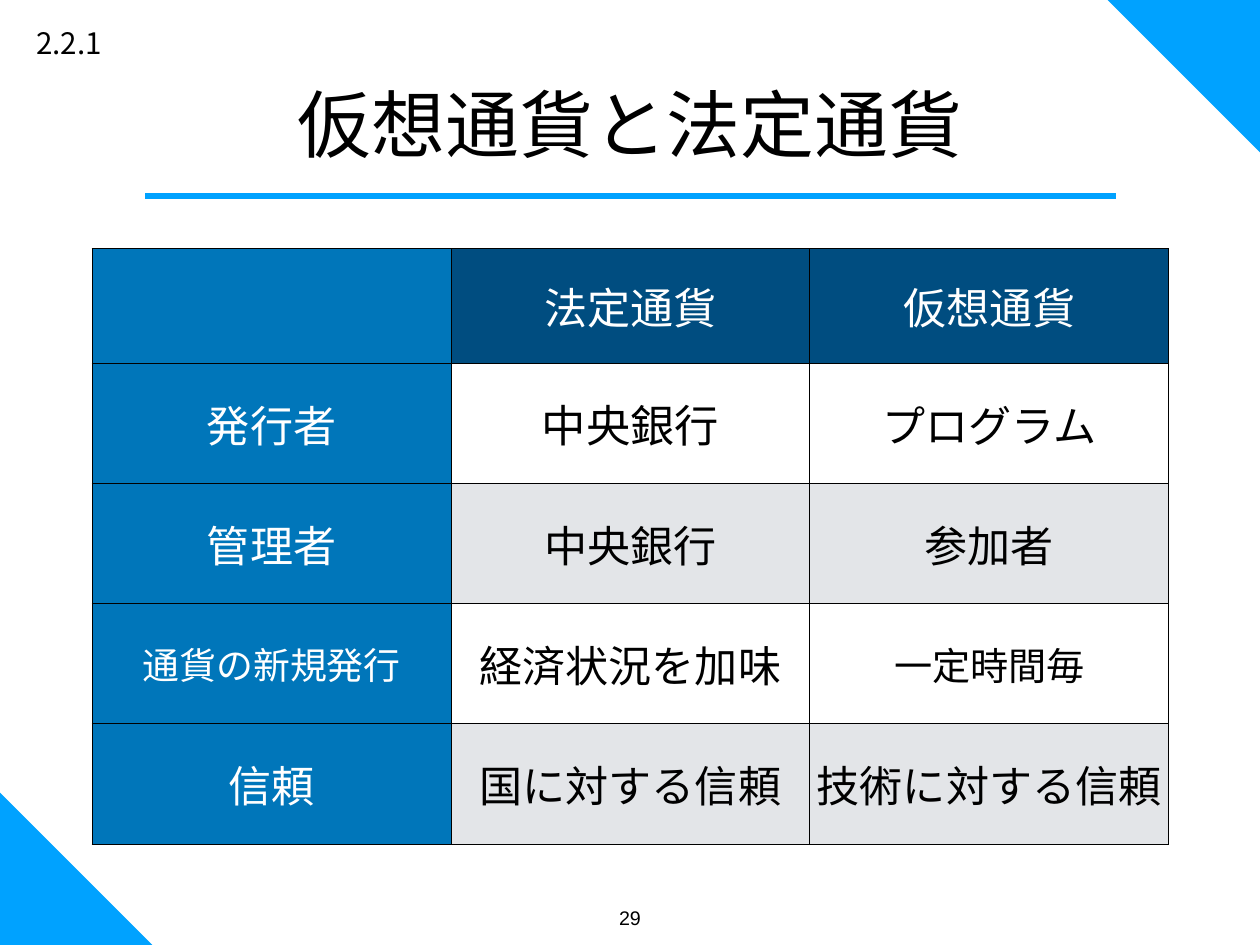
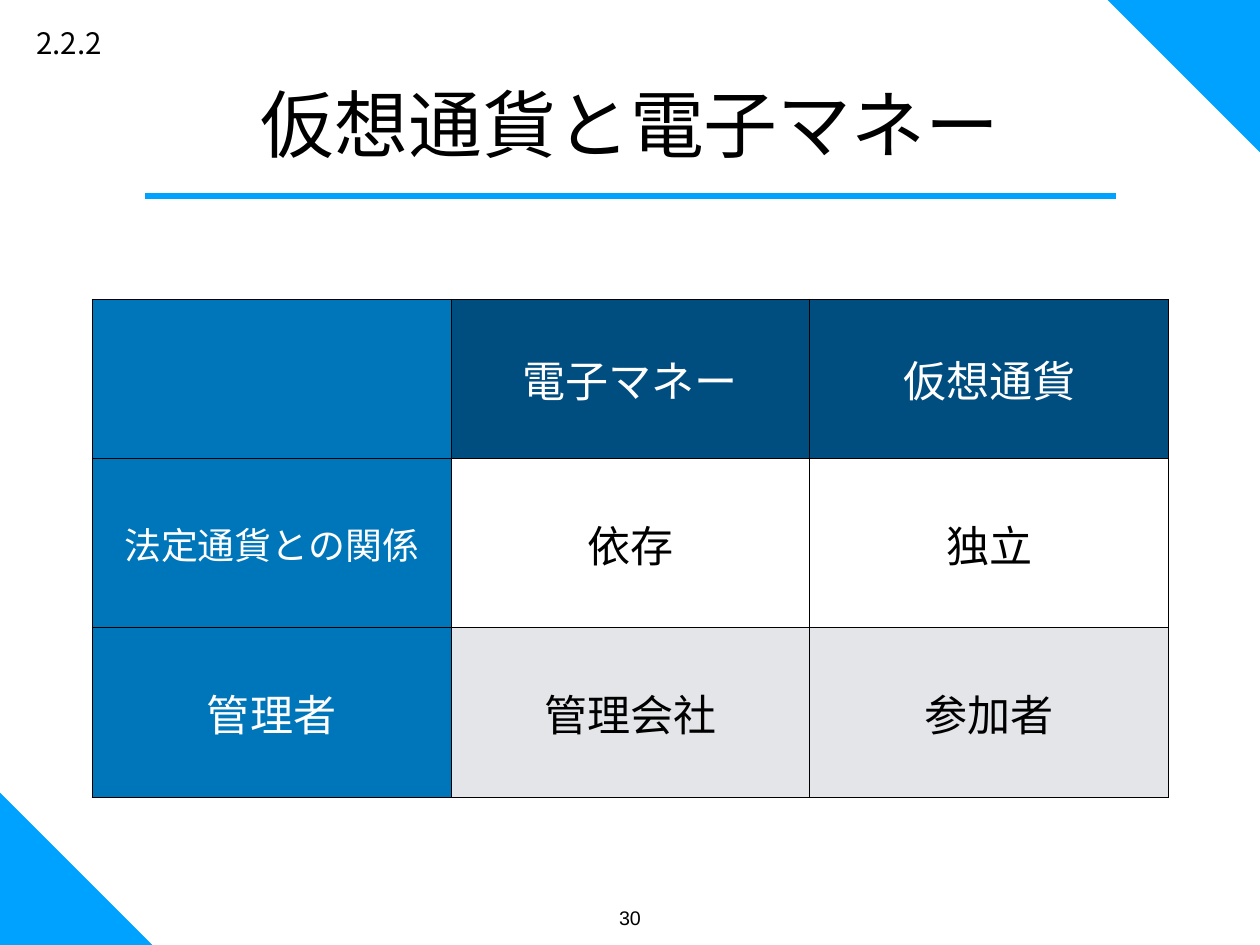
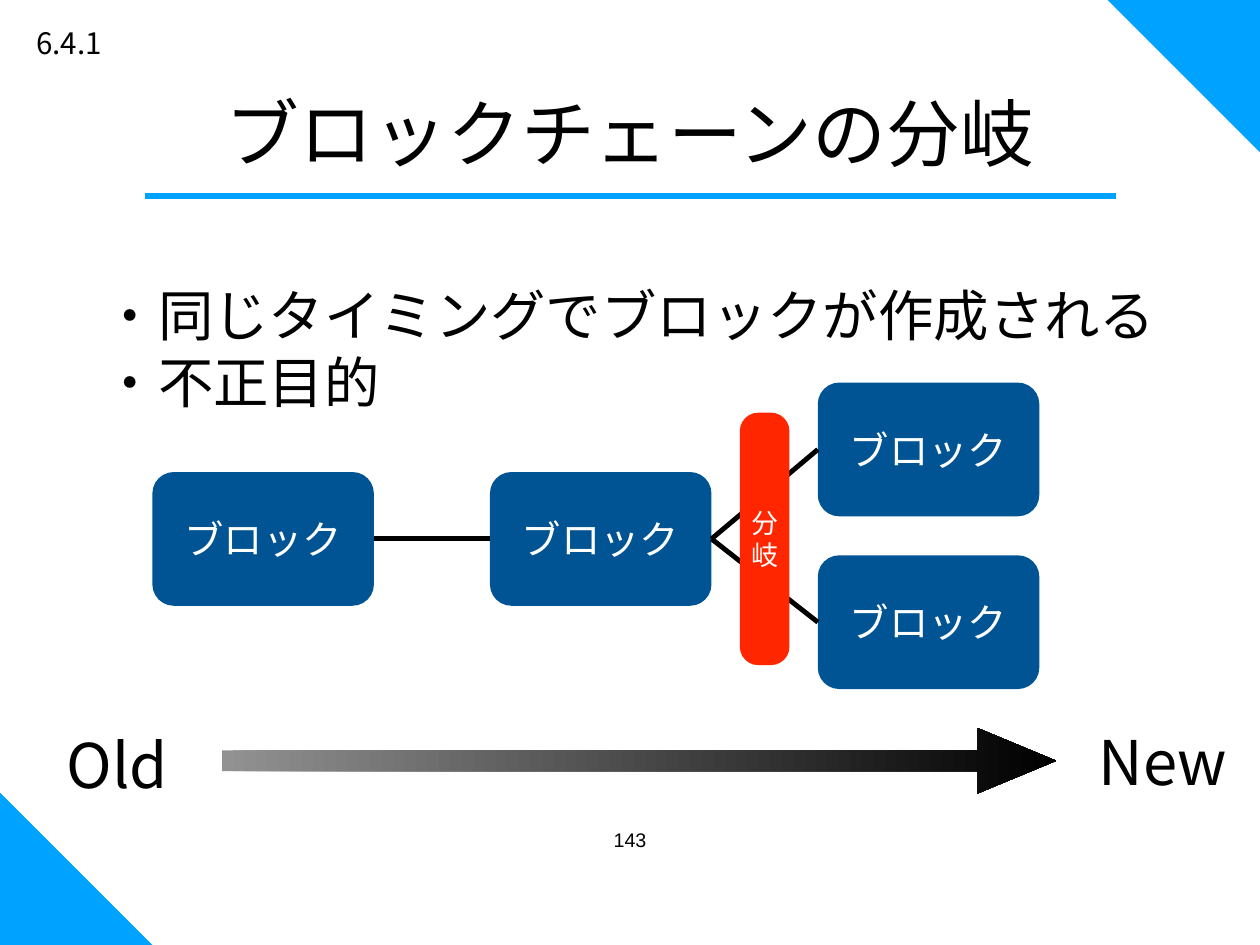
"""Build three slides on virtual currency: two comparison tables and a chain fork diagram."""
from lxml import etree
from pptx import Presentation
from pptx import util as u
from pptx.dml import color
from pptx.enum import shapes, text
from pptx.oxml import ns

WIDTH, HEIGHT = 14.22, 10.67
JAPANESE, LATIN = "Noto Sans CJK JP", "Arial"
BLACK, WHITE, ACCENT = "000000", "FFFFFF", "00A2FF"
HEADER, LABEL, BAND = "004D80", "0076BA", "E3E5E8"
BLOCK, FORK = "005493", "FF2600"
LEFT, CENTER = text.PP_ALIGN.LEFT, text.PP_ALIGN.CENTER
PADDING = 0.06
CORNER = 1.72
NUMBER_WIDTH = 0.8

INSET = {f"margin_{side}": u.Inches(PADDING) for side in ("left", "right", "top", "bottom")}
MIDDLE = {**INSET, "vertical_anchor": text.MSO_ANCHOR.MIDDLE}
FREE = {**MIDDLE, "word_wrap": False, "auto_size": text.MSO_AUTO_SIZE.SHAPE_TO_FIT_TEXT}
FREE_TOP = {**FREE, "vertical_anchor": text.MSO_ANCHOR.TOP}


def paint(fill, hex_color):
    """Give a fill one solid colour."""
    fill.solid()
    fill.fore_color.rgb = color.RGBColor.from_string(hex_color)


def write(holder, words, size, ink=BLACK, layout=FREE, font=JAPANESE, align=CENTER):
    """Write lines of text into a text frame or a table cell."""
    holder.text = words
    for name, value in layout.items():
        setattr(holder, name, value)
    for paragraph in getattr(holder, "text_frame", holder).paragraphs:
        paragraph.alignment = align
        for run in paragraph.runs:
            for name, value in {"size": u.Pt(size), "name": font}.items():
                setattr(run.font, name, value)
            paint(run.font.fill, ink)
            etree.SubElement(run._r.get_or_add_rPr(), ns.qn("a:ea"), typeface=font)


deck = Presentation()
deck.slide_width, deck.slide_height = u.Inches(WIDTH), u.Inches(HEIGHT)

pages = [
    ("2.2.1", "仮想通貨と法定通貨", 0.92, "29", 10.17),
    ("2.2.2", "仮想通貨と電子マネー", 0.92, "30", 10.17),
    ("6.4.1", "ブロックチェーンの分岐", 1.02, "143", 9.29),
]
for section, title, title_top, number, number_top in pages:
    slide = deck.slides.add_slide(deck.slide_layouts[6])
    for left, top, turn in ((0, HEIGHT - CORNER, 0), (WIDTH - CORNER, 0, 180)):
        corner = slide.shapes.add_shape(
            shapes.MSO_SHAPE.RIGHT_TRIANGLE,
            u.Inches(left), u.Inches(top), u.Inches(CORNER), u.Inches(CORNER))
        corner.rotation = turn
        paint(corner.fill, ACCENT)
    rule = slide.shapes.add_connector(
        shapes.MSO_CONNECTOR.STRAIGHT,
        u.Inches(1.64), u.Inches(2.21), u.Inches(12.59), u.Inches(2.21))
    rule.line.width = u.Pt(5)
    paint(rule.line.fill, ACCENT)

    title_width = len(title) * 60 / 72 + 2 * PADDING
    for words, left, top, width, height, size, layout, font, align in (
        (title, (WIDTH - title_width) / 2, title_top, title_width, 0.94,
         60, FREE, JAPANESE, CENTER),
        (number, (WIDTH - NUMBER_WIDTH) / 2, number_top, NUMBER_WIDTH, 0.35,
         16, FREE_TOP, LATIN, CENTER),
        (section, 0.35, 0.26, 1.02, 0.44, 24, FREE, JAPANESE, LEFT),
    ):
        box = slide.shapes.add_textbox(
            u.Inches(left), u.Inches(top), u.Inches(width), u.Inches(height))
        write(box.text_frame, words, size, layout=layout, font=font, align=align)

legal_slide, emoney_slide, fork_slide = deck.slides

comparisons = [
    (legal_slide, 2.81, [1.29, 1.36, 1.36, 1.35, 1.37], {(1, 1): 36, (3, 0): 30, (3, 2): 31}, [
        ("", "法定通貨", "仮想通貨"),
        ("発行者", "中央銀行", "プログラム"),
        ("管理者", "中央銀行", "参加者"),
        ("通貨の新規発行", "経済状況を加味", "一定時間毎"),
        ("信頼", "国に対する信頼", "技術に対する信頼"),
    ]),
    (emoney_slide, 3.38, [1.8, 1.91, 1.91], {(1, 0): 30}, [
        ("", "電子マネー", "仮想通貨"),
        ("法定通貨との関係", "依存", "独立"),
        ("管理者", "管理会社", "参加者"),
    ]),
]
for slide, top, heights, special_sizes, rows in comparisons:
    comparison = slide.shapes.add_table(
        len(rows), 3, u.Inches(1.04), u.Inches(top), u.Inches(12.14), u.Inches(sum(heights))).table
    comparison.first_row = comparison.horz_banding = False
    for column in comparison.columns:
        column.width = u.Inches(4.05)
    for r, (height, row) in enumerate(zip(heights, rows)):
        comparison.rows[r].height = u.Inches(height)
        for c, words in enumerate(row):
            cell = comparison.cell(r, c)
            if c == 0:
                back = LABEL
            elif r == 0:
                back = HEADER
            else:
                back = WHITE if r % 2 else BAND
            ink = BLACK if r and c else WHITE
            write(cell, words, special_sizes.get((r, c), 35), ink, MIDDLE)
            paint(cell.fill, back)
            properties = cell._tc.get_or_add_tcPr()
            for place, side in enumerate("LRTB"):
                border = etree.Element(ns.qn(f"a:ln{side}"), w=str(u.Pt(1)))
                solid = etree.SubElement(border, ns.qn("a:solidFill"))
                etree.SubElement(solid, ns.qn("a:srgbClr"), val=BLACK)
                properties.insert(place, border)

blocks = []
for left, top in ((1.72, 5.33), (5.53, 5.33), (9.23, 4.32), (9.23, 6.27)):
    block = fork_slide.shapes.add_shape(
        shapes.MSO_SHAPE.ROUNDED_RECTANGLE,
        u.Inches(left), u.Inches(top), u.Inches(2.5), u.Inches(1.51))
    block.adjustments[0] = 0.16
    paint(block.fill, BLOCK)
    write(block.text_frame, "ブロック", 32, WHITE, MIDDLE)
    blocks.append(block)

oldest, parent, upper, lower = blocks
for before, after in ((oldest, parent), (parent, upper), (parent, lower)):
    link = fork_slide.shapes.add_connector(shapes.MSO_CONNECTOR.STRAIGHT, 0, 0, 0, 0)
    link.begin_connect(before, 3)
    link.end_connect(after, 1)
    link.line.width = u.Pt(4)
    paint(link.line.fill, BLACK)

fork = fork_slide.shapes.add_shape(
    shapes.MSO_SHAPE.ROUNDED_RECTANGLE,
    u.Inches(8.35), u.Inches(4.66), u.Inches(0.56), u.Inches(2.85))
fork.adjustments[0] = 0.37
paint(fork.fill, FORK)
write(fork.text_frame, "分岐", 22, WHITE, {**MIDDLE, "word_wrap": True})

timeline = fork_slide.shapes.add_shape(
    shapes.MSO_SHAPE.RIGHT_ARROW,
    u.Inches(2.5), u.Inches(8.22), u.Inches(9.42), u.Inches(0.74))
timeline.adjustments[0], timeline.adjustments[1] = 0.32, 1.2
timeline.fill.gradient()
timeline.fill.gradient_angle = 0
for stop, shade in zip(timeline.fill.gradient_stops, ("929292", BLACK)):
    stop.color.rgb = color.RGBColor.from_string(shade)

for words, left, top, width, height, size in (
    ("・同じタイミングでブロックが作成される\n・不正目的", 1.1, 3.08, 12.21, 1.69, 45),
    ("Old", 0.69, 8.22, 1.39, 0.81, 50),
    ("New", 12.34, 8.19, 1.73, 0.81, 50),
):
    box = fork_slide.shapes.add_textbox(
        u.Inches(left), u.Inches(top), u.Inches(width), u.Inches(height))
    write(box.text_frame, words, size, align=LEFT)

for slide in deck.slides:
    for part in slide.shapes:
        if part.shape_type == shapes.MSO_SHAPE_TYPE.AUTO_SHAPE:
            part.shadow.inherit = False
            part.line.fill.background()
        elif part.shape_type == shapes.MSO_SHAPE_TYPE.LINE:
            etree.SubElement(part._element.spPr, ns.qn("a:effectLst"))

deck.save("out.pptx")
